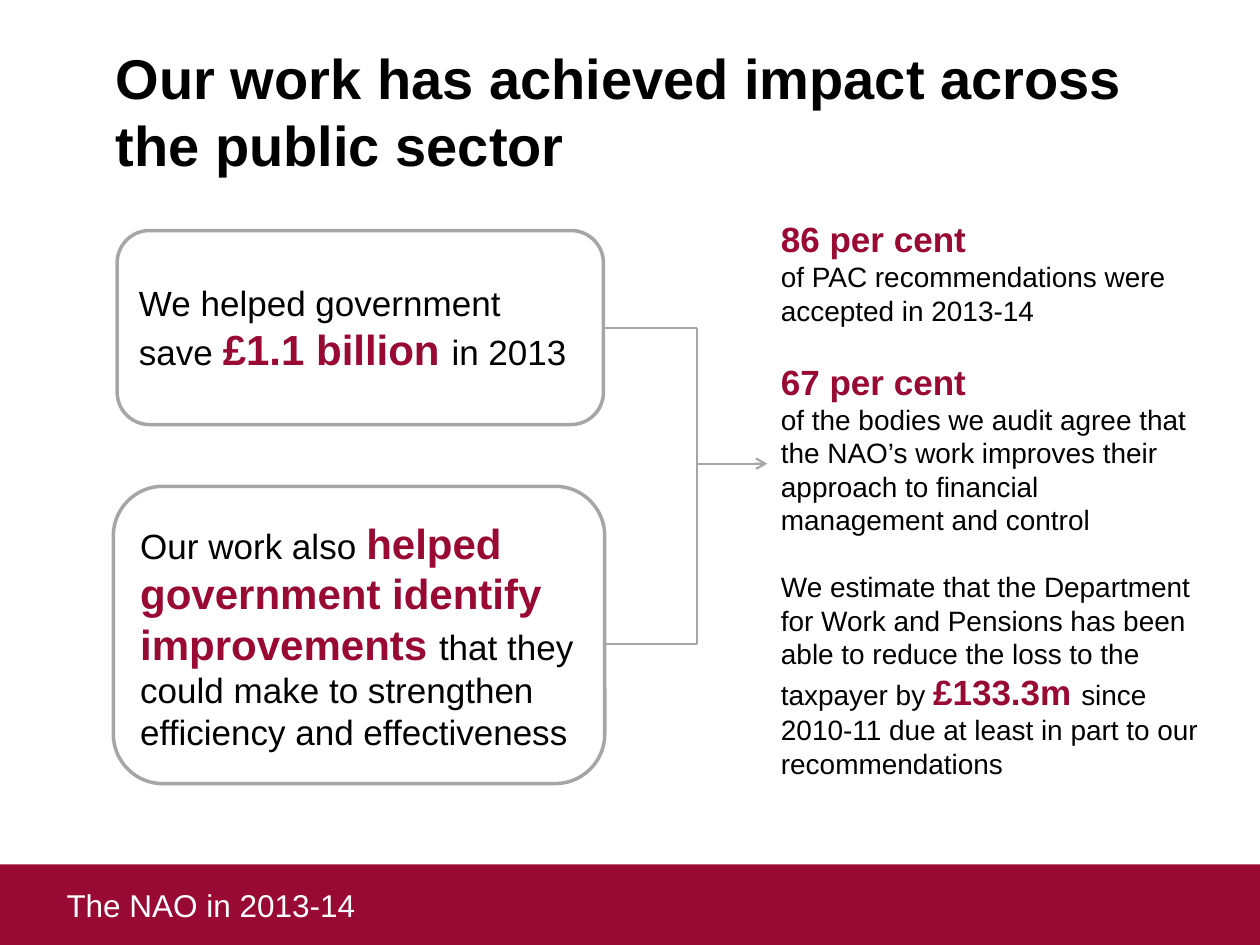
from dataclasses import dataclass

import pptx
import pptx.util
import pptx.oxml.ns
from lxml import etree
from pptx.dml.color import RGBColor
from pptx.enum.shapes import MSO_CONNECTOR, MSO_SHAPE
from pptx.enum.text import MSO_ANCHOR, MSO_AUTO_SIZE, PP_ALIGN
from pptx.util import Inches


@dataclass(frozen=True)
class Theme:
    font: str = "Arial"
    accent: RGBColor = RGBColor(0x98, 0x09, 0x33)
    text: RGBColor = RGBColor(0, 0, 0)
    white: RGBColor = RGBColor(0xFF, 0xFF, 0xFF)
    line: RGBColor = RGBColor(0xA6, 0xA6, 0xA6)
    title: int = 32
    highlight: int = 24
    large: int = 20
    footer: int = 18
    body: int = 16


THEME = Theme()


def set_font(font, size, color, bold=False):
    font.name = THEME.font
    font.size = pptx.util.Pt(size)
    font.bold = bold
    font.color.rgb = color


def add_mixed_runs(p, parts, size, highlight_size):
    """Fill a paragraph with parts that alternate plain and highlighted."""
    p.alignment = PP_ALIGN.LEFT
    for i, text in enumerate(parts):
        r = p.add_run()
        r.text = text
        if i % 2:
            set_font(r.font, highlight_size, THEME.accent, bold=True)
        else:
            set_font(r.font, size, THEME.text)


def add_title(s, text):
    title = s.shapes.title
    title.left, title.top = Inches(0.82), Inches(0.37)
    title.width, title.height = Inches(8.99), Inches(1.01)
    tf = title.text_frame
    tf.text = text
    tf.auto_size = MSO_AUTO_SIZE.NONE
    tf.vertical_anchor = MSO_ANCHOR.MIDDLE
    p = tf.paragraphs[0]
    p.alignment = PP_ALIGN.LEFT
    set_font(p.font, THEME.title, THEME.text, bold=True)


def add_text_box(s, left, top, width, height):
    tf = s.shapes.add_textbox(
        Inches(left), Inches(top), Inches(width), Inches(height)).text_frame
    tf.word_wrap = True
    return tf


def add_footer(s, text):
    band = s.shapes.add_shape(
        MSO_SHAPE.RECTANGLE, 0, Inches(6.86), Inches(10), Inches(0.67))
    band.shadow.inherit = False
    band.fill.solid()
    band.fill.fore_color.rgb = THEME.accent
    band.line.fill.background()
    p = add_text_box(s, 0.43, 6.98, 7.8, 0.4).paragraphs[0]
    p.text = text
    set_font(p.font, THEME.footer, THEME.white)


def add_card(s, left, top, width, height, parts):
    card = s.shapes.add_shape(
        MSO_SHAPE.ROUNDED_RECTANGLE,
        Inches(left), Inches(top), Inches(width), Inches(height))
    card.shadow.inherit = False
    card.fill.solid()
    card.fill.fore_color.rgb = THEME.white
    card.line.color.rgb = THEME.line
    card.line.width = pptx.util.Pt(2)
    tf = card.text_frame
    tf.word_wrap = True
    tf.vertical_anchor = MSO_ANCHOR.MIDDLE
    add_mixed_runs(tf.paragraphs[0], parts, THEME.large, THEME.highlight)
    return card


def add_line(s, x1, y1, x2, y2, arrow=False):
    line = s.shapes.add_connector(
        MSO_CONNECTOR.STRAIGHT, Inches(x1), Inches(y1), Inches(x2), Inches(y2))
    line.line.color.rgb = THEME.line
    line.line.width = pptx.util.Pt(1.25)
    qn = pptx.oxml.ns.qn
    if arrow:
        etree.SubElement(line.line._get_or_add_ln(), qn("a:tailEnd"), type="arrow")
    etree.SubElement(line._element.spPr, qn("a:effectLst"))
    return line


def add_results(s, results):
    """Each result is a list of paragraphs, each a list of alternating parts."""
    tf = add_text_box(s, 6.1, 1.68, 3.54, 4.7)
    p = None
    for result in results:
        for i, parts in enumerate(result):
            if p is None:
                p = tf.paragraphs[0]
            else:
                p = tf.add_paragraph()
                if i == 0:
                    p.space_before = pptx.util.Pt(19)
            add_mixed_runs(p, parts, THEME.body, THEME.large)


def main():
    prs = pptx.Presentation()
    prs.slide_width, prs.slide_height = Inches(10), Inches(7.5)
    s = prs.slides.add_slide(prs.slide_layouts[5])

    add_footer(s, "The NAO in 2013-14")
    add_title(s, "Our work has achieved impact across \vthe public sector")
    savings = add_card(s, 0.93, 1.83, 3.86, 1.54, [
        "We helped government save ", "£1.1 billion ", "in 2013"])
    add_card(s, 0.9, 3.86, 3.9, 2.36, [
        "Our work also ", "helped government identify improvements ",
        "that they could make to strengthen efficiency and effectiveness"])

    trunk, upper, lower, card_edge = 5.53, 2.6, 5.11, 4.79
    add_line(s, trunk, 3.68, 6.09, 3.68, arrow=True)
    add_line(s, trunk, upper, trunk, lower)
    add_line(s, trunk, upper, card_edge, upper).end_connect(savings, 3)
    add_line(s, trunk, lower, card_edge, lower)

    add_results(s, [
        [["", "86 per cent"],
         ["of PAC recommendations were accepted in 2013-14"]],
        [["", "67 per cent"],
         ["of the bodies we audit agree that the NAO’s work improves their "
          "approach to financial management and control"]],
        [["We estimate that the Department for Work and Pensions has been able "
          "to reduce the loss to the taxpayer by ", "£133.3m ",
          "since 2010-11 due at least in part to our recommendations"]],
    ])
    prs.save("out.pptx")


if __name__ == "__main__":
    main()
